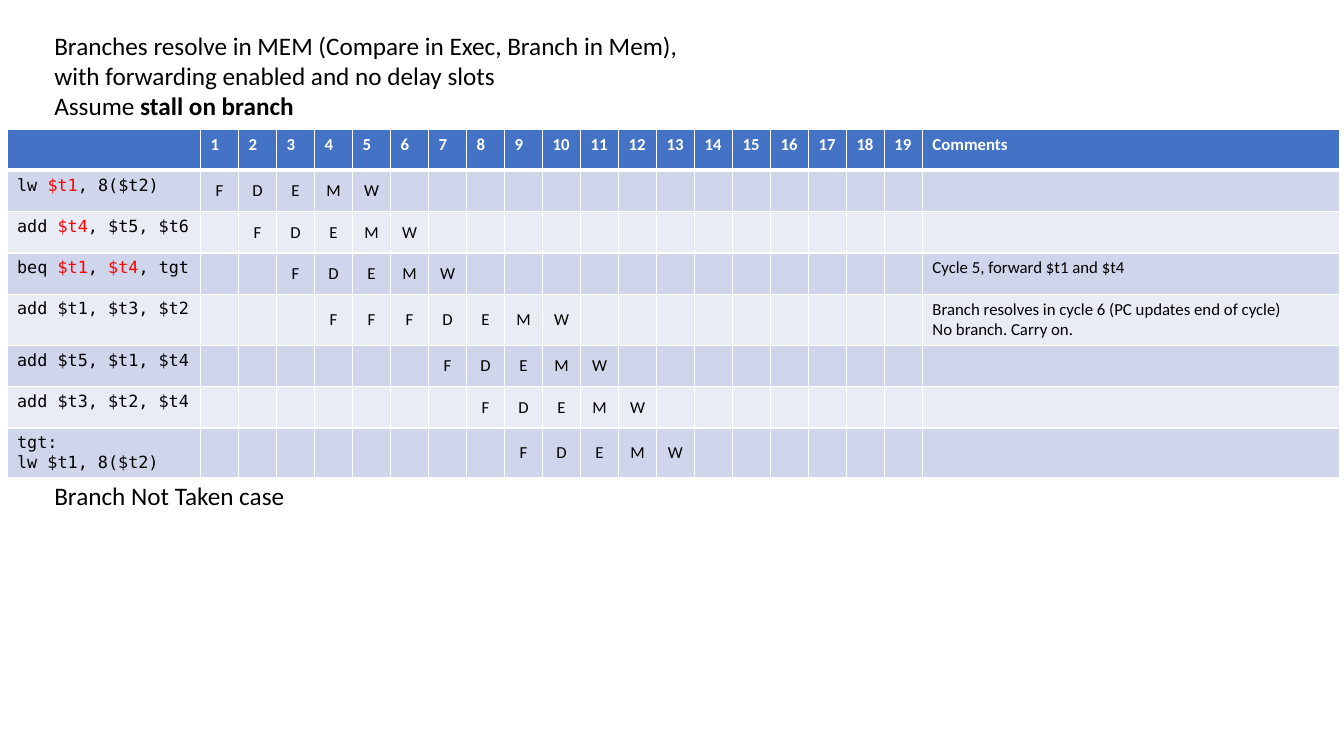
from lxml.etree import SubElement
from pptx import Presentation
from pptx.dml.color import RGBColor
from pptx.enum.text import MSO_ANCHOR as Anchor, MSO_AUTO_SIZE as AutoSize, PP_ALIGN as Align
from pptx.oxml.ns import qn
from pptx.util import Inches, Pt

COLORS = {"text": "000000", "white": "FFFFFF", "register": "FF0000",
          "header": "4472C4", "odd": "CFD5EA", "even": "E9EBF5"}
SANS, MONO = "Calibri", "DejaVu Sans Mono"
CYCLES = 19

# Instruction (registers between asterisks are red), first cycle, stages, comment
PIPELINE = [
    ("lw *$t1*, 8($t2)", 1, "FDEMW", ""),
    ("add *$t4*, $t5, $t6", 2, "FDEMW", ""),
    ("beq *$t1*, *$t4*, tgt", 3, "FDEMW", "Cycle 5, forward $t1 and $t4"),
    ("add $t1, $t3, $t2", 4, "FFFDEMW",
     "Branch resolves in cycle 6 (PC updates end of cycle)\vNo branch. Carry on."),
    ("add $t5, $t1, $t4", 7, "FDEMW", ""),
    ("add $t3, $t2, $t4", 8, "FDEMW", ""),
    ("tgt: \vlw $t1, 8($t2)", 9, "FDEMW", ""),
]


def rgb(name):
    return RGBColor.from_string(COLORS[name])


def write_marked(p, text):
    """Fill a paragraph and return the runs that stood between asterisks."""
    first, *rest = text.split("*")
    p.text = first
    marked = []
    for i, piece in enumerate(rest):
        r = p.add_run()
        r.text = piece
        if i % 2 == 0:
            marked.append(r)
    return marked


def set_font(p, size, color="text", name=SANS, bold=False):
    f = p.font
    f.size, f.name, f.bold = Pt(size), name, bold
    f.color.rgb = rgb(color)


def add_note(s, x, y, w, h, text):
    tf = s.shapes.add_textbox(Inches(x), Inches(y), Inches(w), Inches(h)).text_frame
    tf.word_wrap = False
    tf.auto_size = AutoSize.SHAPE_TO_FIT_TEXT
    p = tf.paragraphs[0]
    for r in write_marked(p, text):
        r.font.bold = True
    set_font(p, 18)


def style_cell(cell, row):
    """Draw white borders, thick under the header, and then the band's fill."""
    tc_pr = cell._tc.get_or_add_tcPr()
    thick = {0: "lnB", 1: "lnT"}.get(row)
    for side in ("lnL", "lnR", "lnT", "lnB"):
        ln = SubElement(tc_pr, qn(f"a:{side}"), w=str(Pt(3 if side == thick else 1)))
        SubElement(SubElement(ln, qn("a:solidFill")), qn("a:srgbClr"), val=COLORS["white"])
    cell.fill.solid()
    cell.fill.fore_color.rgb = rgb("header" if row == 0 else "odd" if row % 2 else "even")


def add_pipeline_table(s, x, y, w, h, code_w=1.92, comment_w=4.14):
    n_rows, n_cols = len(PIPELINE) + 1, CYCLES + 2
    table = s.shapes.add_table(n_rows, n_cols, Inches(x), Inches(y),
                               Inches(w), Inches(h)).table
    cycle_w = (w - code_w - comment_w) / CYCLES
    for col, width in zip(table.columns, [code_w] + [cycle_w] * CYCLES + [comment_w]):
        col.width = Inches(width)
    for row in table.rows:
        row.height = Inches(0.41)

    rows = [["", *map(str, range(1, CYCLES + 1)), "Comments"]]
    for code, start, stages, comment in PIPELINE:
        cycles = [""] * (start - 1) + list(stages)
        rows.append([code, *cycles, *[""] * (CYCLES - len(cycles)), comment])

    for i, texts in enumerate(rows):
        for j, text in enumerate(texts):
            cell = table.cell(i, j)
            style_cell(cell, i)
            p = cell.text_frame.paragraphs[0]
            for r in write_marked(p, text):
                r.font.color.rgb = rgb("register")
            if i == 0:
                set_font(p, 12, "white", bold=True)
            else:
                set_font(p, 12, name=MONO if j == 0 else SANS)
                if 1 <= j <= CYCLES:
                    p.alignment = Align.CENTER
                    cell.vertical_anchor = Anchor.MIDDLE


def main():
    prs = Presentation()
    prs.slide_width, prs.slide_height = Inches(13.33), Inches(7.5)
    s = prs.slides.add_slide(prs.slide_layouts[6])
    add_pipeline_table(s, 0.07, 1.28, 13.22, 3.28)
    add_note(s, 0.44, 0.25, 6.51, 1.01,
             "Branches resolve in MEM (Compare in Exec, Branch in Mem), \v"
             "with forwarding enabled and no delay slots\v"
             "Assume *stall on branch*")
    add_note(s, 0.44, 4.72, 2.51, 0.4, "Branch Not Taken case")
    prs.save("out.pptx")


if __name__ == "__main__":
    main()
